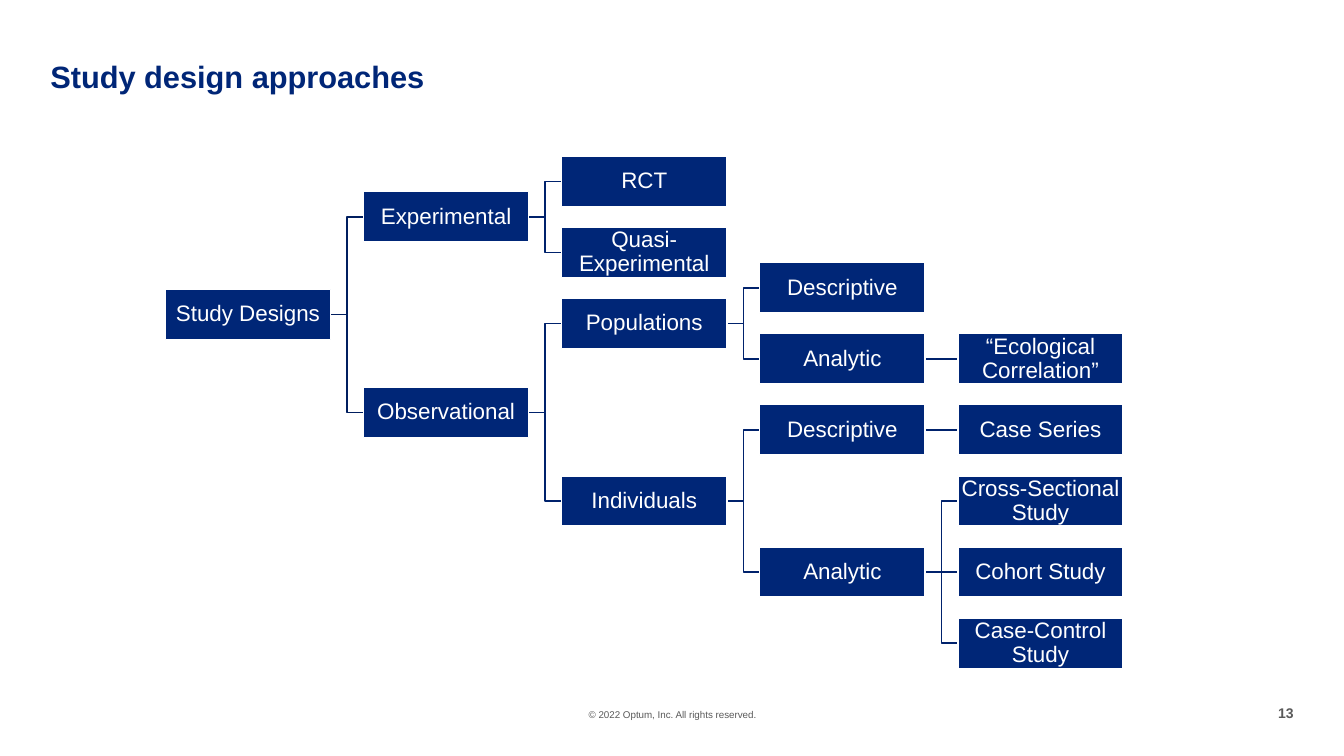
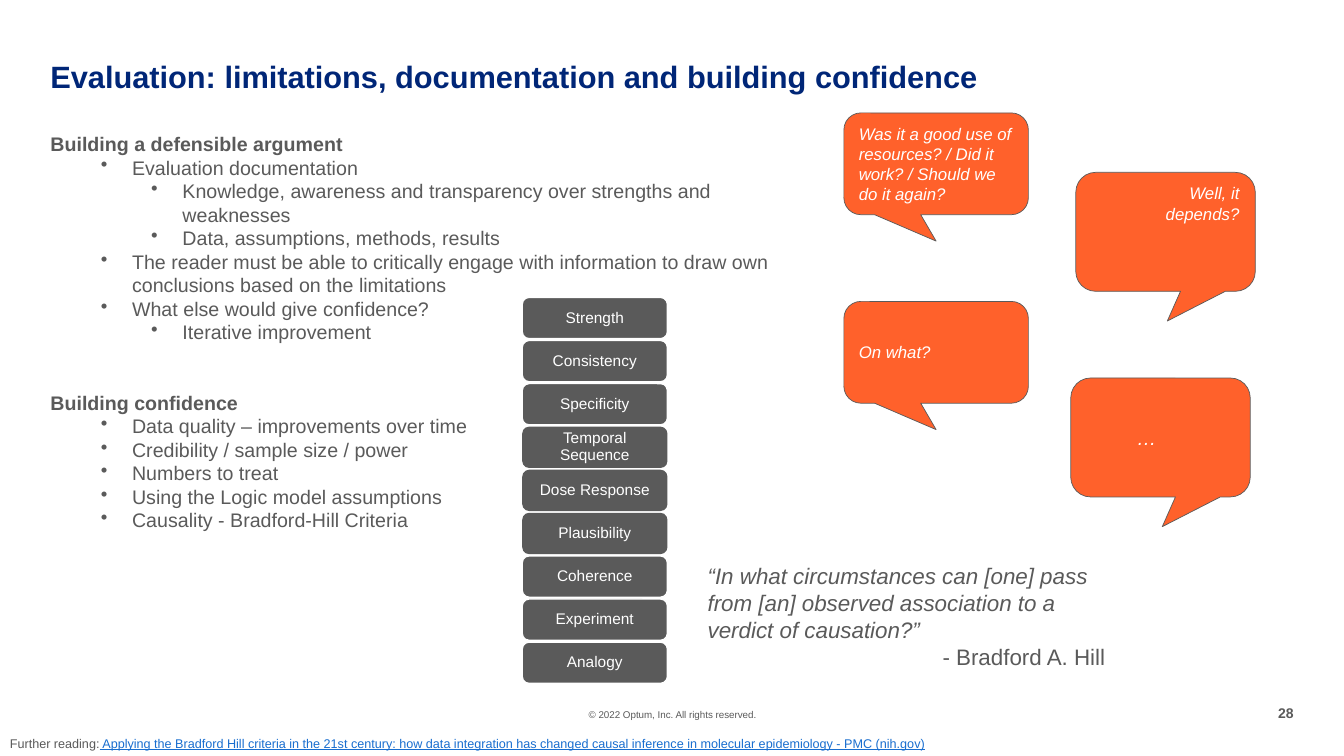
from dataclasses import dataclass, replace
from typing import Any

from lxml import etree
from pptx import Presentation
from pptx import util as u
from pptx.dml.color import RGBColor
from pptx.enum import shapes, text
from pptx.oxml import ns

Box = tuple[float, float, float, float]
LEFT, CENTER, RIGHT = text.PP_ALIGN.LEFT, text.PP_ALIGN.CENTER, text.PP_ALIGN.RIGHT
TOP, MIDDLE = text.MSO_ANCHOR.TOP, text.MSO_ANCHOR.MIDDLE


@dataclass(frozen=True)
class Style:
    size: float
    color: str
    bold: bool = False
    italic: bool = False
    underline: bool = False


@dataclass(frozen=True)
class Theme:
    font: str = "Arial"
    navy: str = "002677"
    root_branch: str = "001E5F"
    branch: str = "00226C"
    gray: str = "5A5A5A"
    orange: str = "FF612B"
    white: str = "FFFFFF"
    title: Style = Style(22, navy, bold=True)
    copyright: Style = Style(7, gray)
    page: Style = Style(10, gray, bold=True)
    node: Style = Style(16, white)
    heading: Style = Style(14, gray, bold=True)
    body: Style = Style(14, gray)
    criterion: Style = Style(11, white)
    speech: Style = Style(12, white, italic=True)
    pause: Style = Style(14, white, italic=True)
    quote: Style = Style(16, gray, italic=True)
    author: Style = Style(16, gray)
    reading: Style = Style(9, gray)
    link: Style = Style(9, "196ECF", underline=True)


THEME = Theme()


@dataclass(frozen=True)
class Run:
    words: str
    style: Style


@dataclass(frozen=True)
class Para:
    runs: tuple[Run, ...]
    align: Any = LEFT
    spacing: float = 1.0
    before: float = 0
    indent: float = 0
    hanging: float = 0


@dataclass(frozen=True)
class Node:
    label: str
    row: float = 0
    children: tuple["Node", ...] = ()


@dataclass(frozen=True)
class Callout:
    words: str
    box: Box
    tail: tuple[float, float]
    style: Style = THEME.speech
    align: Any = LEFT
    anchor: Any = MIDDLE
    indent: float = 0


def para(words: str, style: Style, **layout: Any) -> Para:
    return Para((Run(words, style),), **layout)


def apply(target: Any, values: dict[str, Any]) -> None:
    for name, value in values.items():
        setattr(target, name, value)


def inches(box: Box) -> tuple[int, ...]:
    return tuple(u.Inches(length) for length in box)


def write(frame: Any, paras: list[Para], anchor: Any = TOP,
          inset: tuple[float, float] = (0, 0)) -> None:
    """Fill a text frame; inset is (horizontal, vertical) in inches."""
    across, down = (u.Inches(side) for side in inset)
    apply(frame, {"word_wrap": True, "vertical_anchor": anchor,
                  "margin_left": across, "margin_right": across,
                  "margin_top": down, "margin_bottom": down})
    for index, item in enumerate(paras):
        line = frame.add_paragraph() if index else frame.paragraphs[0]
        apply(line, {"alignment": item.align, "line_spacing": item.spacing,
                     "space_before": u.Pt(item.before)})
        properties = line._p.get_or_add_pPr()
        properties.set("marL", str(u.Inches(item.indent)))
        properties.set("indent", str(-u.Inches(item.hanging)))
        if item.hanging:
            etree.SubElement(properties, ns.qn("a:buChar")).set("char", "•")
        for part in item.runs:
            run = line.add_run()
            run.text = part.words
            style = part.style
            apply(run.font, {"name": THEME.font, "size": u.Pt(style.size),
                             "bold": style.bold, "italic": style.italic,
                             "underline": style.underline})
            run.font.color.rgb = RGBColor.from_string(style.color)


def add_text(slide: Any, box: Box, paras: list[Para], **layout: Any) -> None:
    write(slide.shapes.add_textbox(*inches(box)).text_frame, paras, **layout)


def paint_line(line: Any, color: str, width: float) -> None:
    line.color.rgb = RGBColor.from_string(color)
    line.width = u.Pt(width)


def add_block(slide: Any, kind: Any, box: Box, fill: str,
              outline: str | None, width: float = 1) -> Any:
    block = slide.shapes.add_shape(kind, *inches(box))
    block.shadow.inherit = False
    block.fill.solid()
    block.fill.fore_color.rgb = RGBColor.from_string(fill)
    if outline:
        paint_line(block.line, outline, width)
    else:
        block.line.fill.background()
    return block


def add_base_slide(deck: Any, title: str, page: int) -> Any:
    """Add a slide with the shared title, copyright line and page number."""
    slide = deck.slides.add_slide(deck.slide_layouts[6])
    add_text(slide, (5.14, 7.03, 3.06, 0.12),
             [para("© 2022 Optum, Inc. All rights reserved.", THEME.copyright, align=CENTER)])
    add_text(slide, (12.33, 6.99, 0.5, 0.17), [para(str(page), THEME.page, align=RIGHT)])
    add_text(slide, (0.5, 0.61, 10.5, 0.33), [para(title, THEME.title, spacing=0.9)])
    return slide


# Leaf rows count in half steps; a parent sits midway between its outer children.
DESIGNS = Node("Study Designs", children=(
    Node("Experimental", children=(Node("RCT", 0), Node("Quasi-Experimental", 2))),
    Node("Observational", children=(
        Node("Populations", children=(
            Node("Descriptive", 3),
            Node("Analytic", children=(Node("“Ecological Correlation”", 5),)))),
        Node("Individuals", children=(
            Node("Descriptive", children=(Node("Case Series", 7),)),
            Node("Analytic", children=(
                Node("Cross-Sectional Study", 9),
                Node("Cohort Study", 11),
                Node("Case-Control Study", 13))))))),
))
NODE_WIDTH, NODE_HEIGHT = 1.64, 0.5
FIRST_COLUMN, COLUMN_STEP = 1.64, (9.5 - 1.64) / 4
FIRST_ROW, ROW_STEP = 1.55, (6.13 - 1.55) / 13


def row_of(node: Node) -> float:
    if not node.children:
        return node.row
    return (row_of(node.children[0]) + row_of(node.children[-1])) / 2


def add_branch(slide: Any, parent: Any, child: Any, straight: bool, color: str) -> None:
    """Join two nodes with a connector that lies behind them."""
    kind = shapes.MSO_CONNECTOR.STRAIGHT if straight else shapes.MSO_CONNECTOR.ELBOW
    branch = slide.shapes.add_connector(kind, 0, 0, 0, 0)
    branch.begin_connect(parent, 3)
    branch.end_connect(child, 1)
    paint_line(branch.line, color, 1)
    etree.SubElement(branch.element.spPr, ns.qn("a:effectLst"))
    slide.shapes.element.insert(2, branch.element)


def add_tree(slide: Any, node: Node, level: int = 0) -> Any:
    """Draw a node with everything below it and return its block."""
    box = (FIRST_COLUMN + level * COLUMN_STEP, FIRST_ROW + row_of(node) * ROW_STEP,
           NODE_WIDTH, NODE_HEIGHT)
    block = add_block(slide, shapes.MSO_SHAPE.RECTANGLE, box, THEME.navy, THEME.white)
    write(block.text_frame, [para(node.label, THEME.node, align=CENTER, spacing=0.9)],
          anchor=MIDDLE, inset=(0.01, 0.01))
    for child in node.children:
        add_branch(slide, block, add_tree(slide, child, level + 1),
                   row_of(child) == row_of(node),
                   THEME.branch if level else THEME.root_branch)
    return block


ARGUMENT = [
    (0, "Building a defensible argument"),
    (1, "Evaluation documentation"),
    (2, "Knowledge, awareness and transparency over strengths and weaknesses"),
    (2, "Data, assumptions, methods, results"),
    (1, "The reader must be able to critically engage with information to draw own "
        "conclusions based on the limitations"),
    (1, "What else would give confidence?"),
    (2, "Iterative improvement"),
    (0, "Building confidence"),
    (1, "Data quality – improvements over time"),
    (1, "Credibility / sample size / power"),
    (1, "Numbers to treat"),
    (1, "Using the Logic model assumptions"),
    (1, "Causality - Bradford-Hill Criteria"),
]
CRITERIA = ["Strength", "Consistency", "Specificity", "Temporal Sequence", "Dose Response",
            "Plausibility", "Coherence", "Experiment", "Analogy"]
BORDERLESS = {"Temporal Sequence", "Dose Response", "Plausibility"}
CRITERIA_TOP, CRITERIA_STEP = 2.95, (6.37 - 2.95) / 8

QUESTION = Callout("Was it a good use of resources? / Did it work? / Should we do it again?",
                   (8.37, 1.12, 1.83, 1.01), (0, 0.76))
ANSWER = Callout("Well, it depends?", (10.67, 1.71, 1.78, 1.18), (0.01, 0.75),
                 align=RIGHT, anchor=TOP, indent=0.5)
DIALOGUE = [
    QUESTION,
    ANSWER,
    replace(QUESTION, words="On what?", box=(8.37, 2.99, 1.83, 1.01)),
    replace(ANSWER, words="…", box=(10.62, 3.75, 1.78, 1.18), style=THEME.pause,
            align=LEFT, anchor=MIDDLE),
]


def outline_para(index: int, level: int, words: str) -> Para:
    if level == 0:
        return para(words, THEME.heading, before=33.5 if index else 0)
    return para(words, THEME.body, indent=0.31 + 0.5 * level, hanging=0.31)


def add_criteria(slide: Any) -> None:
    for index, criterion in enumerate(CRITERIA):
        outline = None if criterion in BORDERLESS else THEME.white
        block = add_block(slide, shapes.MSO_SHAPE.ROUNDED_RECTANGLE,
                          (5.18, CRITERIA_TOP + index * CRITERIA_STEP, 1.44, 0.41),
                          THEME.gray, outline)
        write(block.text_frame,
              [para(criterion, THEME.criterion, align=CENTER, spacing=0.9)],
              anchor=MIDDLE, inset=(0.05, 0.02))


def add_callout(slide: Any, callout: Callout) -> None:
    bubble = add_block(slide, shapes.MSO_SHAPE.ROUNDED_RECTANGULAR_CALLOUT, callout.box,
                       THEME.orange, THEME.gray, 0.5)
    for index, offset in enumerate(callout.tail):
        bubble.adjustments[index] = offset
    write(bubble.text_frame,
          [para(callout.words, callout.style, align=callout.align, indent=callout.indent)],
          anchor=callout.anchor, inset=(0.1, 0.05))


def build_designs(deck: Any) -> None:
    add_tree(add_base_slide(deck, "Study design approaches", 13), DESIGNS)


def build_evaluation(deck: Any) -> None:
    slide = add_base_slide(
        deck, "Evaluation: limitations, documentation and building confidence", 28)
    add_text(slide, (0.5, 1.31, 7.41, 4.0),
             [outline_para(index, *entry) for index, entry in enumerate(ARGUMENT)])
    add_criteria(slide)
    for callout in DIALOGUE:
        add_callout(slide, callout)
    add_text(slide, (6.92, 5.53, 4.29, 1.18), [
        para("“In what circumstances can [one] pass from [an] observed association to a "
             "verdict of causation?”", THEME.quote),
        para("- Bradford A. Hill", THEME.author, indent=2.33),
    ], inset=(0.1, 0.05))
    add_text(slide, (0, 7.25, 9.7, 0.25), [Para((
        Run("Further reading:", THEME.reading),
        Run(" Applying the Bradford Hill criteria in the 21st century: how data integration "
            "has changed causal inference in molecular epidemiology - PMC (nih.gov)",
            THEME.link),
    ))], inset=(0.1, 0.05))


def main() -> None:
    deck = Presentation()
    apply(deck, {"slide_width": u.Inches(13.33), "slide_height": u.Inches(7.5)})
    build_designs(deck)
    build_evaluation(deck)
    deck.save("out.pptx")


if __name__ == "__main__":
    main()
